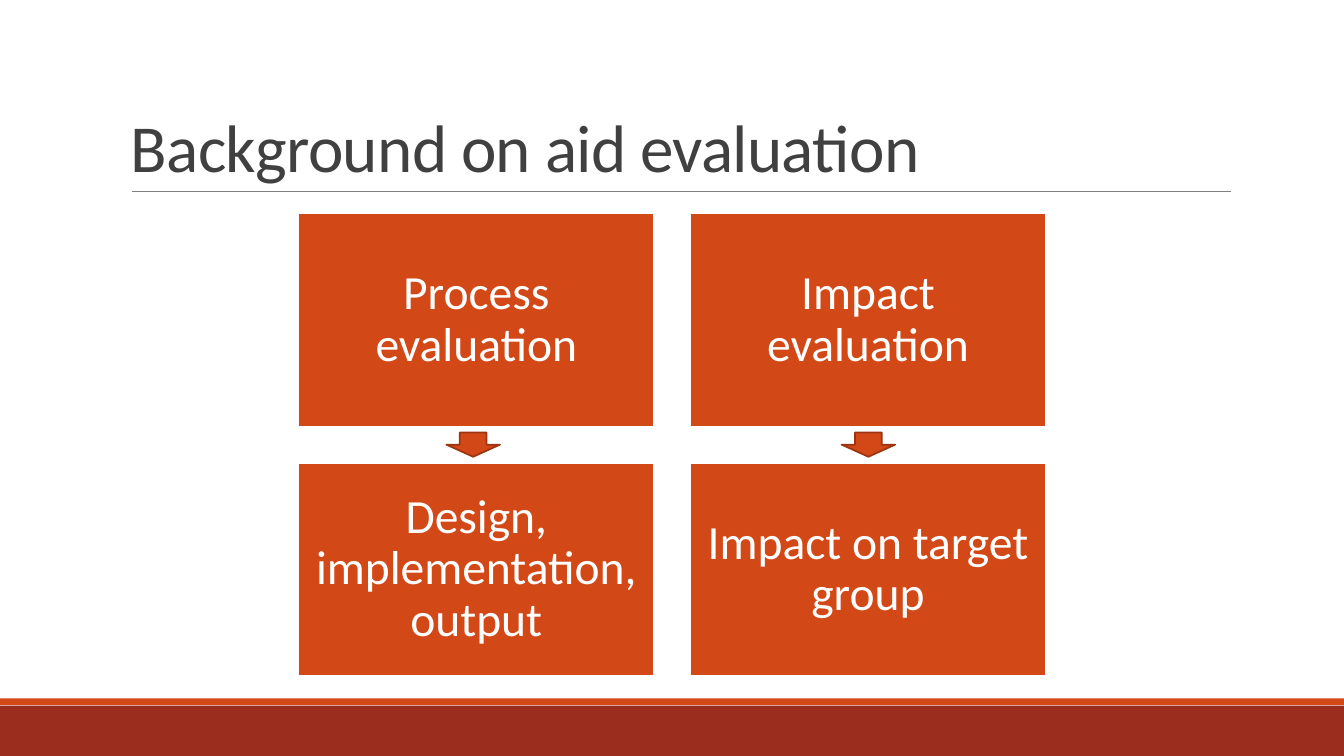
from dataclasses import dataclass

from lxml import etree
from pptx import Presentation
from pptx.dml.color import RGBColor
from pptx.enum.shapes import MSO_CONNECTOR, MSO_SHAPE
from pptx.enum.text import MSO_ANCHOR, PP_ALIGN
from pptx.oxml.ns import qn
from pptx.slide import Slide
from pptx.text.text import TextFrame
from pptx.util import Cm, Pt

RECT, DOWN_ARROW = MSO_SHAPE.RECTANGLE, MSO_SHAPE.DOWN_ARROW
STRAIGHT = MSO_CONNECTOR.STRAIGHT
BOTTOM, MIDDLE = MSO_ANCHOR.BOTTOM, MSO_ANCHOR.MIDDLE
LEFT, CENTER = PP_ALIGN.LEFT, PP_ALIGN.CENTER

FONT = "Calibri"
ORANGE, RED, RUST = "D34817", "9B2D1F", "9C3511"
WHITE, GREY, DARK = "FFFFFF", "808080", "404040"

SLIDE_W, SLIDE_H = 33.87, 19.05
BOX_W, BOX_H = 8.97, 5.38
BOX_X, BOX_Y = 7.52, 5.38
STEP_X, STEP_Y = 9.87, 6.28
ARROW_X, ARROW_Y, ARROW_STEP = 11.25, 10.9, 9.96
ARROW_W, ARROW_H = 1.35, 0.61


@dataclass
class Evaluation:
    name: str
    focus: str


EVALUATIONS = [
    Evaluation("Process evaluation", "Design, implementation, output"),
    Evaluation("Impact evaluation", "Impact on target group"),
]


@dataclass
class Block:
    x: float
    y: float
    w: float
    h: float
    fill: str
    line: str | None = None
    kind: MSO_SHAPE = RECT
    text: str = ""


def rgb(value: str) -> RGBColor:
    return RGBColor.from_string(value)


def write(tf: TextFrame, text: str, size: float, color: str, align: PP_ALIGN,
          anchor: MSO_ANCHOR, leading: float, inset: float, spacing: float = 0) -> None:
    """Fill a text frame with one run; inset is in cm, spacing in points."""
    tf.word_wrap = True
    tf.vertical_anchor = anchor
    tf.margin_left = tf.margin_right = Cm(inset)
    tf.margin_top = tf.margin_bottom = Cm(inset / 2 if anchor == BOTTOM else inset)
    p = tf.paragraphs[0]
    p.alignment = align
    p.line_spacing = leading
    r = p.add_run()
    r.text = text
    r.font.name = FONT
    r.font.size = Pt(size)
    r.font.color.rgb = rgb(color)
    if spacing:
        r.font._element.set("spc", str(round(spacing * 100)))


def add_block(s: Slide, block: Block) -> None:
    sp = s.shapes.add_shape(block.kind, Cm(block.x), Cm(block.y), Cm(block.w), Cm(block.h))
    sp.shadow.inherit = False
    sp.fill.solid()
    sp.fill.fore_color.rgb = rgb(block.fill)
    if block.line:
        sp.line.color.rgb = rgb(block.line)
        sp.line.width = Pt(1.25)
    else:
        sp.line.fill.background()
    if block.text:
        write(sp.text_frame, block.text, 34, WHITE, CENTER, MIDDLE, 0.9, 0.36)


def add_title(s: Slide, text: str) -> None:
    """Draw the heading and the rule under it."""
    rule = s.shapes.add_connector(STRAIGHT, Cm(3.33), Cm(4.83), Cm(31.01), Cm(4.83))
    rule.line.color.rgb = rgb(GREY)
    rule.line.width = Pt(0.5)
    etree.SubElement(rule._element.spPr, qn("a:effectLst"))
    box = s.shapes.add_textbox(Cm(3.05), Cm(0.79), Cm(27.94), Cm(4.04))
    write(box.text_frame, text, 48, DARK, LEFT, BOTTOM, 0.85, 0.25, -0.5)


def main() -> None:
    prs = Presentation()
    prs.slide_width, prs.slide_height = Cm(SLIDE_W), Cm(SLIDE_H)
    s = prs.slides.add_slide(prs.slide_layouts[6])

    add_block(s, Block(0, 17.78, SLIDE_W, 1.27, RED))
    add_block(s, Block(0, 17.6, SLIDE_W, 0.17, ORANGE))
    add_title(s, "Background on aid evaluation")

    for col, evaluation in enumerate(EVALUATIONS):
        for row, text in enumerate((evaluation.name, evaluation.focus)):
            add_block(s, Block(BOX_X + col * STEP_X, BOX_Y + row * STEP_Y,
                               BOX_W, BOX_H, ORANGE, WHITE, text=text))
        add_block(s, Block(ARROW_X + col * ARROW_STEP, ARROW_Y,
                           ARROW_W, ARROW_H, ORANGE, RUST, DOWN_ARROW))

    prs.save("out.pptx")


if __name__ == "__main__":
    main()
